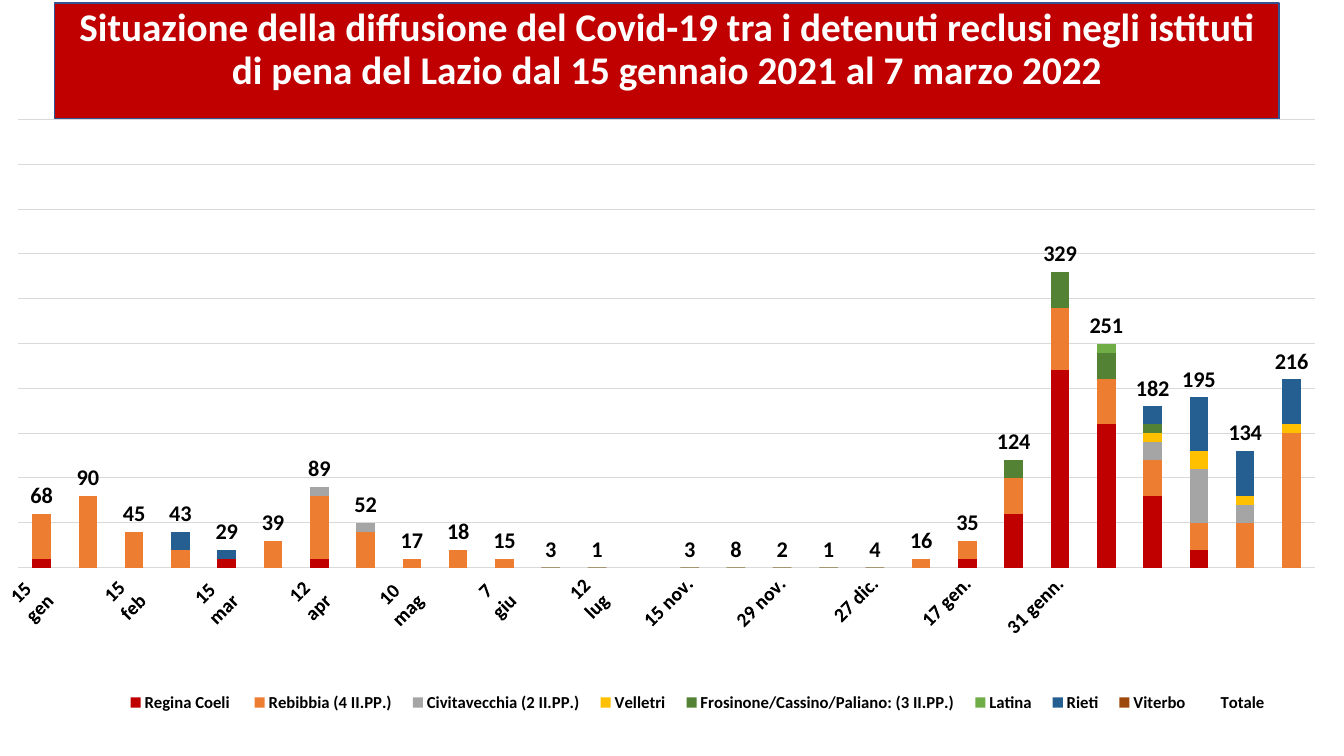
from typing import NamedTuple

from lxml.etree import SubElement
from pptx import Presentation
from pptx.chart.chart import Chart
from pptx.chart.data import CategoryChartData
from pptx.dml.color import RGBColor
from pptx.enum.chart import XL_CHART_TYPE as ChartType
from pptx.enum.chart import XL_LABEL_POSITION as LabelPosition
from pptx.enum.chart import XL_LEGEND_POSITION as LegendPosition
from pptx.enum.chart import XL_TICK_LABEL_POSITION as TickLabelPosition
from pptx.enum.chart import XL_TICK_MARK as TickMark
from pptx.enum.shapes import MSO_SHAPE as Preset
from pptx.enum.text import MSO_ANCHOR as Anchor
from pptx.enum.text import PP_ALIGN as Align
from pptx.oxml import parse_xml
from pptx.oxml.ns import nsdecls, qn
from pptx.shapes.autoshape import Shape
from pptx.slide import Slide
from pptx.text.text import Font
from pptx.util import Cm, Pt

WHITE = RGBColor(0xFF, 0xFF, 0xFF)
BLACK = RGBColor(0x00, 0x00, 0x00)
RED = RGBColor(0xC0, 0x00, 0x00)
BORDER_BLUE = RGBColor(0x32, 0x54, 0x91)
GRID_GREY = RGBColor(0xD9, 0xD9, 0xD9)
ORANGE = RGBColor(0xED, 0x7D, 0x31)
GREY = RGBColor(0xA5, 0xA5, 0xA5)
YELLOW = RGBColor(0xFF, 0xC0, 0x00)
DARK_GREEN = RGBColor(0x54, 0x82, 0x35)
GREEN = RGBColor(0x70, 0xAD, 0x47)
BLUE = RGBColor(0x25, 0x5E, 0x91)
BROWN = RGBColor(0x9E, 0x48, 0x0E)
FONT = "Calibri"
CHART_WIDTH, CHART_HEIGHT = Cm(33.6), Cm(16.69)
TITLE = (
    "Situazione della diffusione del Covid-19 tra i detenuti reclusi negli "
    "istituti di pena del Lazio dal 15 gennaio 2021 al 7 marzo 2022"
)


class Prison(NamedTuple):
    name: str
    color: RGBColor


class Survey(NamedTuple):
    day: str
    total: int | None
    cases: tuple[int | None, ...]


PRISONS = [
    Prison("Regina Coeli ", RED),
    Prison("Rebibbia (4 II.PP.)", ORANGE),
    Prison("Civitavecchia (2 II.PP.)", GREY),
    Prison("Velletri", YELLOW),
    Prison("Frosinone/Cassino/Paliano: (3 II.PP.)", DARK_GREEN),
    Prison("Latina", GREEN),
    Prison("Rieti", BLUE),
    Prison("Viterbo", BROWN),
]
NO_CASES = (0,) * len(PRISONS)
NO_DATA = (None,) * len(PRISONS)

SURVEYS = [
    Survey("15\n gen", 68, (10, 50, 0, 0, 0, 0, 0, 0)),
    Survey("29 \ngen", 90, (0, 80, 0, 0, 0, 0, 0, 0)),
    Survey("15 \nfeb", 45, (0, 40, 0, 0, 0, 0, 0, 0)),
    Survey("1 \nmar", 43, (0, 20, 0, 0, 0, 0, 20, 0)),
    Survey("15 \nmar", 29, (10, 0, 0, 0, 0, 0, 10, 0)),
    Survey("29 \nmar", 39, (0, 30, 0, 0, 0, 0, 0, 0)),
    Survey("12 \napr", 89, (10, 70, 10, 0, 0, 0, 0, 0)),
    Survey("26 \napr", 52, (0, 40, 10, 0, 0, 0, 0, 0)),
    Survey("10 \nmag", 17, (0, 10, 0, 0, 0, 0, 0, 0)),
    Survey("24 \nmag", 18, (0, 20, 0, 0, 0, 0, 0, 0)),
    Survey("7 \ngiu", 15, (0, 10, 0, 0, 0, 0, 0, 0)),
    Survey("21 \ngiu", 3, NO_CASES),
    Survey("12\nlug", 1, NO_CASES),
    Survey("", None, NO_DATA),
    Survey("15 nov.", 3, NO_CASES),
    Survey(" 22 nov.", 8, NO_CASES),
    Survey("29 nov.", 2, NO_CASES),
    Survey("13 dic.", 1, NO_CASES),
    Survey("27 dic.", 4, NO_CASES),
    Survey("10 gen.", 16, (0, 10, 0, 0, 0, 0, 0, 0)),
    Survey("17 gen.", 35, (10, 20, 0, 0, 0, 0, 0, 0)),
    Survey("", 124, (60, 40, 0, 0, 20, 0, 0, 0)),
    Survey("31 genn.", 329, (220, 70, 0, 0, 40, 0, 0, 0)),
    Survey("", 251, (160, 50, 0, 0, 30, 10, 0, 0)),
    Survey("", 182, (80, 40, 20, 10, 10, 0, 20, 0)),
    Survey("21 feb.", 195, (20, 30, 60, 20, 0, 0, 60, 0)),
    Survey("", 134, (0, 50, 20, 10, 0, 0, 50, 0)),
    Survey("7 mar.", 216, (0, 150, 0, 10, 0, 0, 50, 0)),
]


def style_font(font: Font, size: int, color: RGBColor, bold: bool = True) -> None:
    font.name = FONT
    font.size = Pt(size)
    font.bold = bold
    font.color.rgb = color


def write_text(box: Shape, text: str, *, size: int, color: RGBColor, align: Align) -> None:
    frame = box.text_frame
    frame.word_wrap = True
    frame.vertical_anchor = Anchor.TOP
    para = frame.paragraphs[0]
    para.alignment = align
    para.line_spacing = 0.9
    para.space_before = Pt(10)
    span = para.add_run()
    span.text = text
    style_font(span.font, size, color)


def add_banner(page: Slide) -> None:
    banner = page.shapes.add_shape(Preset.RECTANGLE, Cm(1.37), Cm(0.08), Cm(30.86), Cm(2.92))
    banner.shadow.inherit = False
    banner.fill.solid()
    banner.fill.fore_color.rgb = RED
    banner.line.color.rgb = BORDER_BLUE
    banner.line.width = Pt(1)
    write_text(banner, TITLE, size=28, color=WHITE, align=Align.CENTER)


def survey_data() -> CategoryChartData:
    data = CategoryChartData(number_format="0")
    data.categories = [survey.day for survey in SURVEYS]
    for prison, cases in zip(PRISONS, zip(*(survey.cases for survey in SURVEYS))):
        data.add_series(prison.name, cases)
    data.add_series("Totale", [survey.total for survey in SURVEYS])
    return data


def style_axes(chart: Chart) -> None:
    counts = chart.value_axis
    counts.minimum_scale, counts.maximum_scale, counts.major_unit = 0, 500, 50
    counts.major_tick_mark = counts.minor_tick_mark = TickMark.NONE
    counts.visible = False
    counts.has_major_gridlines = True
    days = chart.category_axis
    days.major_tick_mark = days.minor_tick_mark = TickMark.NONE
    days.tick_label_position = TickLabelPosition.NEXT_TO_AXIS
    style_font(days.tick_labels.font, 14, BLACK)
    for line in (counts.major_gridlines.format.line, days.format.line):
        line.color.rgb = GRID_GREY
        line.width = Pt(0.75)
    axis = chart.element.find(f".//{qn('c:catAx')}")
    axis.find(f"{qn('c:txPr')}/{qn('a:bodyPr')}").set("rot", "-2700000")
    skip = SubElement(axis, qn("c:tickLblSkip"))
    skip.set("val", "2")
    axis.find(qn("c:noMultiLvlLbl")).addprevious(skip)


def place_part(
    chart: Chart, tag: str, index: int, target: str, x: Cm, y: Cm, width: Cm, height: Cm
) -> None:
    part = chart.element.find(f".//{qn(tag)}")
    for old in part.findall(qn("c:layout")):
        part.remove(old)
    part.insert(index, parse_xml(
        f'<c:layout {nsdecls("c")}><c:manualLayout>{target}'
        f'<c:xMode val="edge"/><c:yMode val="edge"/>'
        f'<c:x val="{x / CHART_WIDTH}"/><c:y val="{y / CHART_HEIGHT}"/>'
        f'<c:w val="{width / CHART_WIDTH}"/><c:h val="{height / CHART_HEIGHT}"/>'
        f'</c:manualLayout></c:layout>'
    ))


def add_case_chart(page: Slide) -> None:
    chart = page.shapes.add_chart(
        ChartType.COLUMN_STACKED, Cm(0), Cm(3), CHART_WIDTH, CHART_HEIGHT, survey_data()
    ).chart
    style_font(chart.font, 10, BLACK, bold=False)
    chart.has_title = False
    chart.has_legend = True
    chart.legend.position = LegendPosition.BOTTOM
    chart.legend.include_in_layout = False
    style_font(chart.legend.font, 12, BLACK)
    plot = chart.plots[0]
    plot.gap_width, plot.overlap = 150, 100
    plot.vary_by_categories = False
    *prison_series, total = plot.series
    for series, prison in zip(prison_series, PRISONS):
        series.format.fill.solid()
        series.format.fill.fore_color.rgb = prison.color
    total.format.fill.background()
    total.format.line.fill.background()
    labels = total.data_labels
    labels.show_value = True
    labels.position = LabelPosition.INSIDE_BASE
    style_font(labels.font, 16, BLACK)
    style_axes(chart)
    inner = '<c:layoutTarget val="inner"/>'
    place_part(chart, "c:plotArea", 0, inner, Cm(0.3), Cm(0), Cm(32.83), Cm(11.3))
    place_part(chart, "c:legend", 1, "", Cm(2.75), Cm(14.25), Cm(29.5), Cm(0.9))


def main() -> None:
    deck = Presentation()
    deck.slide_width, deck.slide_height = Cm(33.87), Cm(19.05)
    page = deck.slides.add_slide(deck.slide_layouts[6])
    add_banner(page)
    add_case_chart(page)
    deck.save("out.pptx")


if __name__ == "__main__":
    main()
